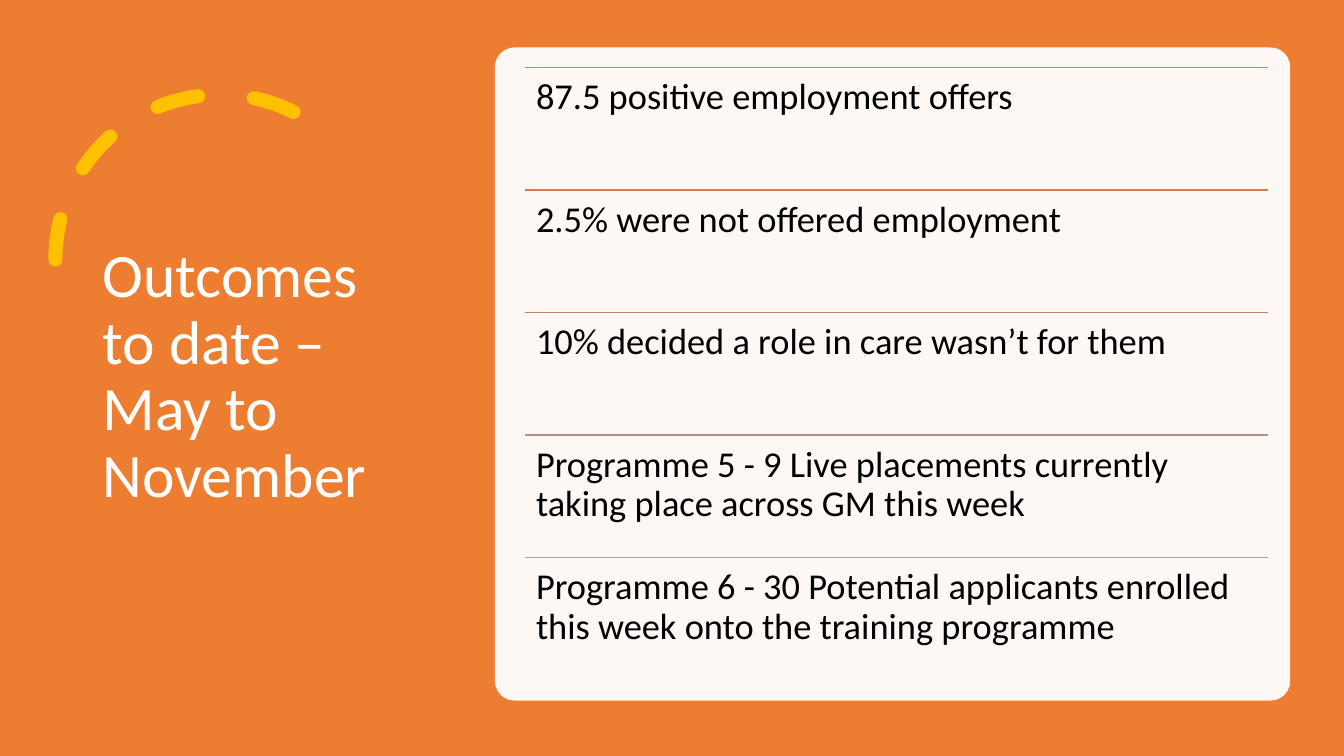
from pptx import Presentation
from pptx.dml.color import RGBColor
from pptx.enum.dml import MSO_LINE
from pptx.enum.shapes import MSO_CONNECTOR, MSO_SHAPE
from pptx.enum.text import MSO_ANCHOR, MSO_AUTO_SIZE, PP_ALIGN
from pptx.oxml.ns import qn
from pptx.util import Pt
from lxml import etree

RECTANGLE = MSO_SHAPE.RECTANGLE
ROUNDED = MSO_SHAPE.ROUNDED_RECTANGLE
ARC = MSO_SHAPE.ARC
STRAIGHT = MSO_CONNECTOR.STRAIGHT
DASH = MSO_LINE.DASH
LEFT = PP_ALIGN.LEFT
TOP = MSO_ANCHOR.TOP
MIDDLE = MSO_ANCHOR.MIDDLE
NO_AUTOFIT = MSO_AUTO_SIZE.NONE

ORANGE = RGBColor(0xED, 0x7D, 0x31)
YELLOW = RGBColor(0xFF, 0xC0, 0x00)
WHITE = RGBColor(0xFF, 0xFF, 0xFF)
BLACK = RGBColor(0x00, 0x00, 0x00)

OUTCOMES = [
    ("87.5 positive employment offers", ORANGE),
    ("2.5% were not offered employment", RGBColor(0xD8, 0x7A, 0x51)),
    ("10% decided a role in care wasn’t for them", RGBColor(0xC4, 0x81, 0x70)),
    ("Programme 5 - 9 Live placements currently taking place across GM this week",
     RGBColor(0xB4, 0x90, 0x8B)),
    ("Programme 6 - 30 Potential applicants enrolled this week onto the training programme",
     RGBColor(0xA5, 0xA5, 0xA5)),
]
LIST_LEFT, LIST_TOP, LIST_WIDTH, ROW_HEIGHT = 375.1, 48.1, 530.6, 87.55


def write_text(frame, text, size, color, font="Calibri", anchor=TOP, inset=None):
    frame.word_wrap = True
    frame.auto_size = NO_AUTOFIT
    frame.vertical_anchor = anchor
    if inset is not None:
        frame.margin_left = frame.margin_right = Pt(inset)
        frame.margin_top = frame.margin_bottom = Pt(inset)
    paragraph = frame.paragraphs[0]
    paragraph.alignment = LEFT
    paragraph.line_spacing = 0.9
    run = paragraph.add_run()
    run.text = text
    run.font.name = font
    run.font.size = Pt(size)
    run.font.color.rgb = color


class SlideBuilder:
    def __init__(self, slide):
        self.slide = slide
        self.shapes = slide.shapes

    def panel(self, kind, left, top, width, height, color, opacity=None, corner=None):
        shape = self.shapes.add_shape(kind, Pt(left), Pt(top), Pt(width), Pt(height))
        shape.shadow.inherit = False
        shape.fill.solid()
        shape.fill.fore_color.rgb = color
        shape.line.fill.background()
        if corner is not None:
            shape.adjustments[0] = corner
        if opacity is not None:
            fill_color = shape._element.spPr.find(qn("a:solidFill"))[0]
            etree.SubElement(fill_color, qn("a:alpha"), val=str(opacity * 1000))

    def dashed_arc(self, left, top, size, color, weight, start):
        """Draw a round-capped arc, mirrored left to right."""
        shape = self.shapes.add_shape(ARC, Pt(left), Pt(top), Pt(size), Pt(size))
        shape.shadow.inherit = False
        shape.adjustments[0] = start
        shape.adjustments[1] = 0
        shape.fill.background()
        shape.line.color.rgb = color
        shape.line.width = Pt(weight)
        shape.line.dash_style = DASH
        properties = shape._element.spPr
        properties.find(qn("a:ln")).set("cap", "rnd")
        properties.find(qn("a:xfrm")).set("flipH", "1")

    def title(self, text, left, top, width, height):
        title = self.shapes.title
        title.left, title.top = Pt(left), Pt(top)
        title.width, title.height = Pt(width), Pt(height)
        write_text(title.text_frame, text, size=44, color=WHITE, anchor=MIDDLE)
        # Bring the title in front of the background panel.
        self.shapes._spTree.append(title._element)

    def rule(self, group, left, top, width, color):
        line = group.shapes.add_connector(
            STRAIGHT, Pt(left), Pt(top), Pt(left + width), Pt(top))
        line.line.color.rgb = color
        line.line.width = Pt(1)
        etree.SubElement(line._element.spPr, qn("a:effectLst"))

    def ruled_list(self, items, left, top, width, row_height):
        group = self.shapes.add_group_shape()
        for index, (text, color) in enumerate(items):
            row_top = top + index * row_height
            self.rule(group, left, row_top, width, color)
            box = group.shapes.add_textbox(
                Pt(left), Pt(row_top), Pt(width), Pt(row_height))
            write_text(box.text_frame, text, size=26, color=BLACK, inset=7.8)


def main():
    presentation = Presentation()
    presentation.slide_width = Pt(960)
    presentation.slide_height = Pt(540)
    title_only = presentation.slide_layouts[5]
    builder = SlideBuilder(presentation.slides.add_slide(title_only))

    builder.panel(RECTANGLE, 0, 0, 960, 540, ORANGE)
    builder.dashed_arc(39.6, 67.7, 235.4, YELLOW, weight=10, start=146.13)
    builder.title("Outcomes to date – May to November", 66.2, 50.4, 232.6, 438.5)
    builder.panel(ROUNDED, 353.5, 33.9, 568.1, 466.5, WHITE, opacity=95, corner=0.03)
    builder.ruled_list(OUTCOMES, LIST_LEFT, LIST_TOP, LIST_WIDTH, ROW_HEIGHT)

    presentation.save("out.pptx")


if __name__ == "__main__":
    main()
